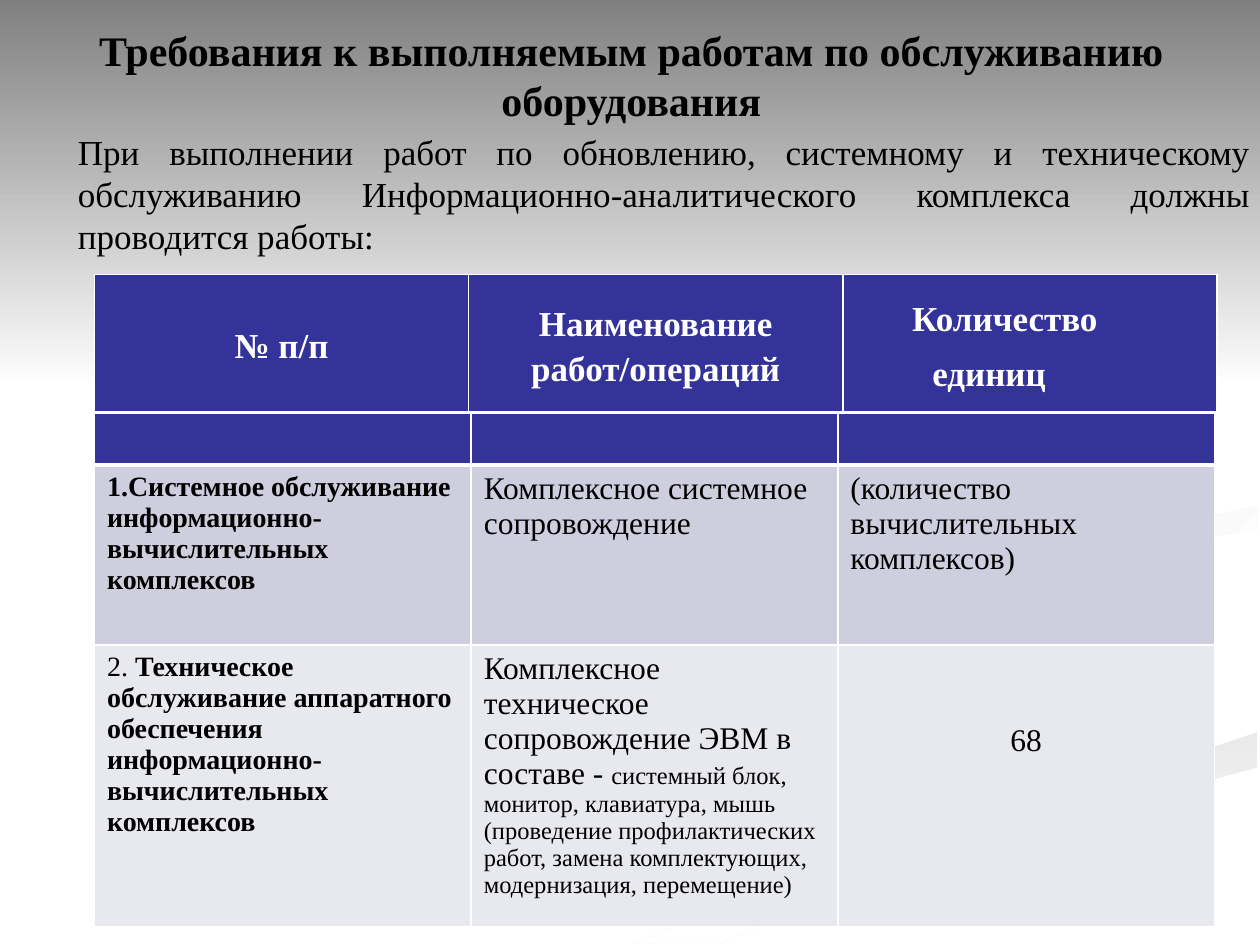
"""Build the slide on equipment maintenance requirements."""
from pptx import Presentation
from pptx.util import Inches, Pt
from pptx.dml.color import RGBColor as RGB
from pptx.enum.text import PP_ALIGN as AL, MSO_ANCHOR as ANC
from pptx.oxml import parse_xml
from pptx.oxml.ns import nsdecls

FONT = "Times New Roman"
LEFT, CENTER, JUSTIFY = AL.LEFT, AL.CENTER, AL.JUSTIFY


def rgb(value):
    return RGB.from_string(value)


def style(p, size, color="000000", bold=False, align=LEFT):
    p.alignment = align
    p.font.name = FONT
    p.font.size = Pt(size)
    p.font.bold = bold
    p.font.color.rgb = rgb(color)


prs = Presentation()
prs.slide_width, prs.slide_height = Inches(10), Inches(7.5)
s = prs.slides.add_slide(prs.slide_layouts[6])

backdrop = [
    ("EAEAEA", "FFFFFF", 270,
     [(5.03, 7.49), (6.96, 6.69), (9.36, 6.02), (9.98, 5.81), (9.98, 6.09),
      (7.22, 6.82), (5.71, 7.49)]),
    ("F1F1F1", "FFFFFF", 315,
     [(7.81, 4.6), (8.35, 4.3), (9.33, 4.15), (9.98, 4.02), (9.98, 4.2),
      (8.59, 4.43), (8.26, 4.96)]),
    ("808080", "FFFFFF", 270, [(0, 0), (0, 3.08), (10, 3.08), (10, 0)]),
]
for first, last, angle, points in backdrop:
    corners = [(Inches(x), Inches(y)) for x, y in points]
    fb = s.shapes.build_freeform(*corners[0])
    fb.add_line_segments(corners[1:])
    sp = fb.convert_to_shape()
    sp.shadow.inherit = False
    sp.line.fill.background()
    sp.fill.gradient()
    sp.fill.gradient_angle = angle
    for stop, color in zip(sp.fill.gradient_stops, (first, last)):
        stop.color.rgb = rgb(color)

texts = [
    ((0.51, 0.13, 9, 0.93), ANC.MIDDLE, 24, True, CENTER, 0,
     "Требования к выполняемым работам по обслуживанию оборудования"),
    ((0.52, 0.99, 9.5, 5.63), ANC.TOP, 20, False, JUSTIFY, 4,
     "При выполнении работ по обновлению, системному и техническому обслуживанию "
     "Информационно-аналитического комплекса должны проводится работы:"),
]
for box, anchor, size, bold, align, before, text in texts:
    tf = s.shapes.add_textbox(*map(Inches, box)).text_frame
    tf.word_wrap = True
    tf.vertical_anchor = anchor
    p = tf.paragraphs[0]
    p.text = text
    p.space_before = Pt(before)
    style(p, size, bold=bold, align=align)

tables = [
    (2.18, [2.97, 2.97, 2.97], [1.1], ["333399"]),
    (3.28, [2.99, 2.91, 2.99], [0.41, 1.43, 2.23], ["333399", "CECEDE", "E8E8EF"]),
]
grids = []
for top, widths, heights, fills in tables:
    tb = s.shapes.add_table(len(heights), 3, Inches(0.75), Inches(top),
                            Inches(sum(widths)), Inches(sum(heights))).table
    for col, width in zip(tb.columns, widths):
        col.width = Inches(width)
    for i, (row, height, fill) in enumerate(zip(tb.rows, heights, fills)):
        row.height = Inches(height)
        for cell in row.cells:
            cell.fill.solid()
            cell.fill.fore_color.rgb = rgb(fill)
            tcPr = cell._tc.get_or_add_tcPr()
            for k, side in enumerate(("lnL", "lnR", "lnT", "lnB")):
                width = Pt(3 if side == "lnB" and i == 0 else 1)
                tcPr.insert(k, parse_xml(
                    f'<a:{side} {nsdecls("a")} w="{width}"><a:solidFill>'
                    f'<a:srgbClr val="FFFFFF"/></a:solidFill></a:{side}>'))
    grids.append(tb)
head, body = grids

headers = [
    (["№ п/п"], CENTER, [0]),
    (["Наименование\vработ/операций"], CENTER, [0]),
    (["Количество", "единиц"], LEFT, [0.54, 0.7]),
]
for cell, (lines, align, indents) in zip(head.rows[0].cells, headers):
    cell.vertical_anchor = ANC.MIDDLE
    cell.margin_left = cell.margin_right = Inches(0.01)
    cell.margin_top = cell.margin_bottom = Inches(0.01)
    cell.text = "\n".join(lines)
    for p, indent in zip(cell.text_frame.paragraphs, indents):
        style(p, 20, "FFFFFF", True, align)
        p.line_spacing = 1.15
        p.space_after = Pt(6)
        p._p.get_or_add_pPr().set("marL", str(Inches(indent)))

entries = [
    (1, 0, 16, True, LEFT, "1.Системное обслуживание\n"
     "информационно-вычислительных\nкомплексов"),
    (1, 1, 18, False, LEFT, "Комплексное системное сопровождение"),
    (1, 2, 18, False, LEFT, "(количество вычислительных комплексов)"),
    (2, 0, 16, True, LEFT, "2. "),
    (2, 1, 18, False, LEFT, "Комплексное техническое сопровождение ЭВМ в составе - "),
    (2, 2, 18, False, CENTER, "68"),
]
for i, j, size, bold, align, text in entries:
    cell = body.cell(i, j)
    cell.text = text
    for p in cell.text_frame.paragraphs:
        style(p, size, bold=bold, align=align)

p = body.cell(2, 0).text_frame.paragraphs[0]
p.runs[0].font.bold = False
p.add_run().text = ("Техническое обслуживание аппаратного обеспечения "
                    "информационно-вычислительных комплексов")
r = body.cell(2, 1).text_frame.paragraphs[0].add_run()
r.text = ("системный блок, монитор, клавиатура, мышь (проведение профилактических "
          "работ, замена комплектующих, модернизация, перемещение)")
r.font.size = Pt(14)
body.cell(2, 2).margin_top = Inches(0.62)

prs.save("out.pptx")
